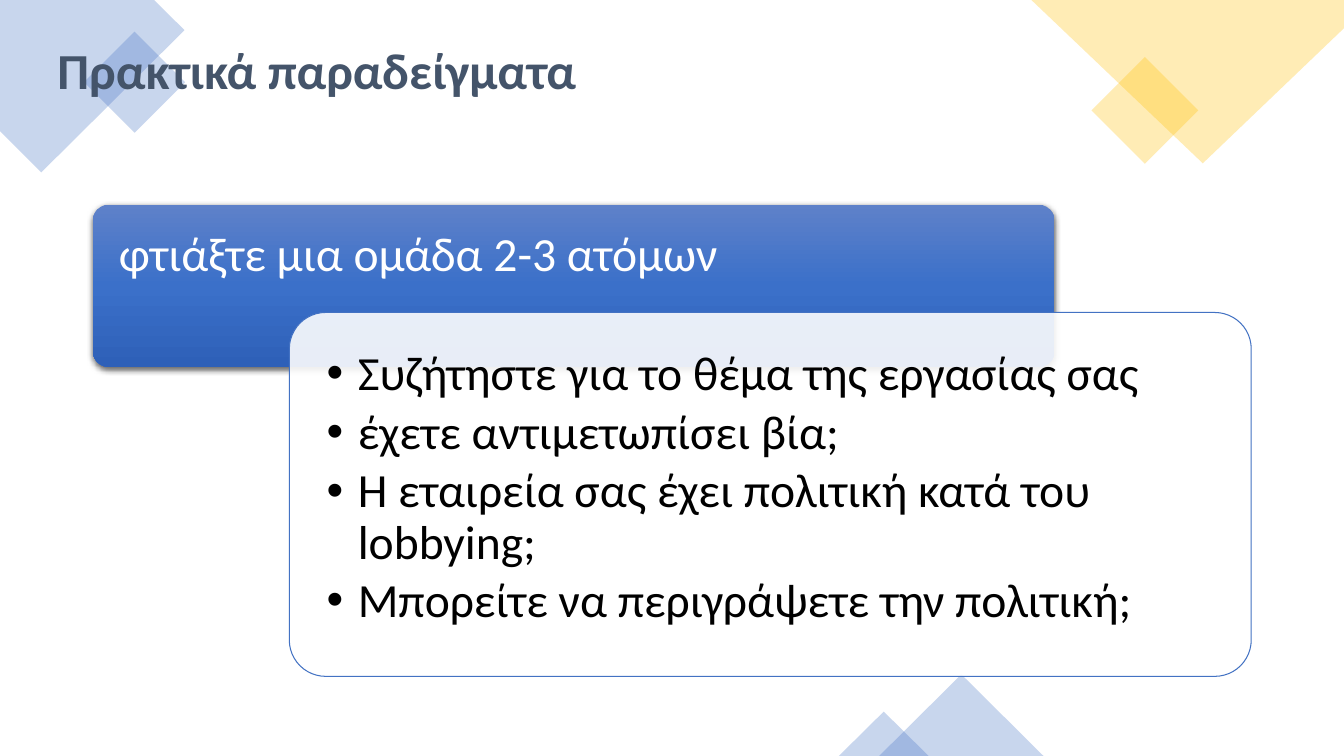
from copy import deepcopy

from lxml import etree
from pptx import Presentation
from pptx.dml.color import RGBColor
from pptx.enum.shapes import MSO_SHAPE
from pptx.enum.text import MSO_ANCHOR, MSO_AUTO_SIZE, PP_ALIGN
from pptx.oxml.ns import qn
from pptx.util import Pt

PX = 9144  # 100 px to the inch
RECTANGLE = MSO_SHAPE.RECTANGLE
TRIANGLE = MSO_SHAPE.ISOSCELES_TRIANGLE
ROUNDED = MSO_SHAPE.ROUNDED_RECTANGLE
TOP, MIDDLE = MSO_ANCHOR.TOP, MSO_ANCHOR.MIDDLE
LEFT = PP_ALIGN.LEFT
NO_AUTOFIT = MSO_AUTO_SIZE.NONE

THEME = {
    "font": "Calibri",
    "title_size": 36,
    "body_size": 34,
    "title": "44546A",
    "blue": "4472C4",
    "yellow": "FFC000",
    "white": "FFFFFF",
    "black": "000000",
    "outline": "4372C3",
    "bar_gradient": [(0, "5E81C9"), (0.5, "3B70C9"), (1, "2E60B8")],
}


def paint(shape, color, opacity):
    """Give a shape a translucent fill with no line and no shadow."""
    shape.shadow.inherit = False
    shape.line.fill.background()
    shape.fill.solid()
    shape.fill.fore_color.rgb = RGBColor.from_string(color)
    color_element = shape.fill._xPr.find(qn("a:solidFill"))[0]
    etree.SubElement(color_element, qn("a:alpha"), val=str(opacity * 1000))


def write(shape, lines, size, color, anchor, insets, bold=False, bullet_indent=0):
    frame = shape.text_frame
    frame.text = "\n".join(lines)
    frame.word_wrap = True
    frame.auto_size = NO_AUTOFIT
    frame.vertical_anchor = anchor
    frame.margin_left = frame.margin_right = insets[0] * PX
    frame.margin_top = frame.margin_bottom = insets[1] * PX
    for index, paragraph in enumerate(frame.paragraphs):
        paragraph.alignment = LEFT
        paragraph.line_spacing = 0.9
        paragraph.space_before = Pt(5.1 if index else 0)
        if bullet_indent:
            paragraph.level = 1
            properties = paragraph._p.get_or_add_pPr()
            properties.set("marL", str(bullet_indent * PX))
            properties.set("indent", str(-bullet_indent * PX))
            etree.SubElement(properties, qn("a:buFont"), typeface="Arial")
            etree.SubElement(properties, qn("a:buChar"), char="•")
        for run in paragraph.runs:
            run.font.name = THEME["font"]
            run.font.size = Pt(size)
            run.font.bold = bold
            run.font.color.rgb = RGBColor.from_string(color)


presentation = Presentation()
presentation.slide_width = 1333 * PX
presentation.slide_height = 750 * PX
slide = presentation.slides.add_slide(presentation.slide_layouts[5])
shapes = slide.shapes

# Corner decorations
corners = [
    ("blue", [(0, 0), (153, 0), (183, 30), (41, 171), (0, 130)]),
    ("yellow", [(1333, 0), (1023, 0), (1193, 162), (1333, 28)]),
]
for color, points in corners:
    builder = shapes.build_freeform(*points[0], scale=PX)
    builder.add_line_segments(points[1:], close=True)
    paint(builder.convert_to_shape(), THEME[color], 29)

ornaments = [
    (RECTANGLE, "blue", 315, (98, 46, 71, 71)),
    (RECTANGLE, "yellow", 315, (1098, 72, 75, 75)),
    (TRIANGLE, "blue", 0, (872, 669, 163, 81)),
    (TRIANGLE, "blue", 0, (832, 706, 89, 44)),
]
for preset, color, rotation, box in ornaments:
    ornament = shapes.add_shape(preset, *(value * PX for value in box))
    ornament.rotation = rotation
    paint(ornament, THEME[color], 29)

# Title, brought in front of the decorations
title = shapes.title
title.left, title.top, title.width, title.height = (
    value * PX for value in (47, 22, 1150, 102))
write(title, ["Πρακτικά παραδείγματα"], THEME["title_size"], THEME["title"],
      MIDDLE, (10, 5), bold=True)
title.element.getparent().append(title.element)

# Blue heading bar
bar = shapes.add_shape(ROUNDED, 92 * PX, 203 * PX, 954 * PX, 161 * PX)
bar.adjustments[0] = 0.1
bar.line.fill.background()
bar.fill.gradient()
bar.fill.gradient_angle = 270
stop_list = bar.fill._xPr.find(qn("a:gradFill")).find(qn("a:gsLst"))
stop_list.insert(1, deepcopy(stop_list[0]))
for stop, (position, color) in zip(bar.fill.gradient_stops, THEME["bar_gradient"]):
    stop.position = position
    stop.color.rgb = RGBColor.from_string(color)
bar.shadow.inherit = False
effects = bar.element.spPr.find(qn("a:effectLst"))
shadow = etree.SubElement(effects, qn("a:outerShdw"), blurRad=str(Pt(4.5)),
                          dist=str(Pt(1.5)), dir="5400000", rotWithShape="0")
shadow_color = etree.SubElement(shadow, qn("a:srgbClr"), val=THEME["black"])
etree.SubElement(shadow_color, qn("a:alpha"), val="62000")
heading = shapes.add_textbox(92 * PX, 203 * PX, 954 * PX, 107 * PX)
write(heading, ["φτιάξτε μια ομάδα 2-3 ατόμων"], THEME["body_size"],
      THEME["white"], TOP, (26, 26))

# White panel with the questions
panel = shapes.add_shape(ROUNDED, 287 * PX, 310 * PX, 954 * PX, 361 * PX)
panel.adjustments[0] = 0.1
paint(panel, THEME["white"], 89)
panel.line.color.rgb = RGBColor.from_string(THEME["outline"])
panel.line.width = Pt(0.75)
questions = [
    "Συζήτηστε για το θέμα της εργασίας σας",
    "έχετε αντιμετωπίσει βία;",
    "Η εταιρεία σας έχει πολιτική κατά του lobbying;",
    "Μπορείτε να περιγράψετε την πολιτική;",
]
question_list = shapes.add_textbox(298 * PX, 321 * PX, 933 * PX, 340 * PX)
write(question_list, questions, THEME["body_size"], THEME["black"], TOP,
      (26, 26), bullet_indent=31)

presentation.save("out.pptx")
